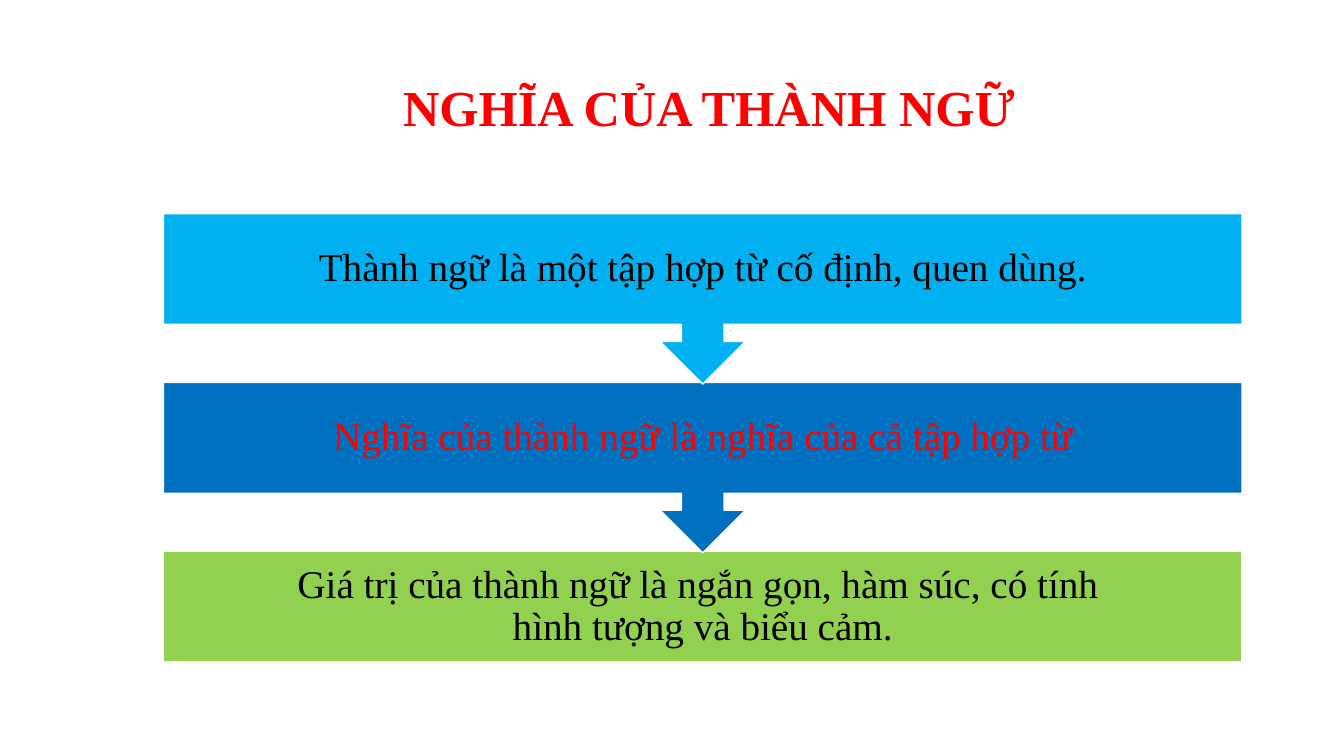
from dataclasses import dataclass

from pptx import Presentation
from pptx.dml.color import RGBColor
from pptx.enum.shapes import MSO_SHAPE as Shape
from pptx.enum.text import MSO_ANCHOR as Anchor, PP_ALIGN as Align
from pptx.shapes.autoshape import Shape as AutoShape
from pptx.slide import Slide
from pptx.util import Inches, Pt

FONT = "Times New Roman"
COLORS = {
    "white": "FFFFFF",
    "black": "000000",
    "red": "FF0000",
    "sky": "00B0F0",
    "blue": "0070C0",
    "green": "92D050",
}
STEP_LEFT, STEP_TOP, STEP_WIDTH = 1.62, 2.12, 10.7
STEP_PITCH = 1.675
BAR_HEIGHT, CALLOUT_HEIGHT = 1.1, 1.69
CALLOUT_ADJUSTMENTS = (0.25, 0.25, 0.25, 0.65)


@dataclass
class Step:
    text: str
    fill: str
    text_color: str


STEPS = [
    Step("Thành ngữ là một tập hợp từ cố định, quen dùng.", "sky", "black"),
    Step("Nghĩa của thành ngữ là nghĩa của cả tập hợp từ", "blue", "red"),
    Step(
        "Giá trị của thành ngữ là ngắn gọn, hàm súc, có tính \n"
        "hình tượng và biểu cảm.",
        "green",
        "black",
    ),
]


def color(name: str) -> RGBColor:
    return RGBColor.from_string(COLORS[name])


def write(
    box: AutoShape,
    text: str,
    size: int,
    text_color: str,
    anchor: Anchor,
    margins: tuple[float, float],
    bold: bool = False,
) -> None:
    frame = box.text_frame
    frame.text = text
    frame.word_wrap = True
    frame.vertical_anchor = anchor
    frame.margin_left = frame.margin_right = Inches(margins[0])
    frame.margin_top = frame.margin_bottom = Inches(margins[1])
    for para in frame.paragraphs:
        para.alignment = Align.CENTER
        para.line_spacing = 0.9
        for span in para.runs:
            span.font.name = FONT
            span.font.size = Pt(size)
            span.font.bold = bold
            span.font.color.rgb = color(text_color)


def draw_title(page: Slide) -> None:
    box = page.shapes.add_textbox(
        Inches(1.78), Inches(0.58), Inches(10.38), Inches(0.83)
    )
    write(box, " NGHĨA CỦA THÀNH NGỮ", 36, "red", Anchor.BOTTOM, (0.1, 0.05), True)


def draw_step(page: Slide, index: int, step: Step) -> None:
    is_last = index == len(STEPS) - 1
    box = page.shapes.add_shape(
        Shape.RECTANGLE if is_last else Shape.DOWN_ARROW_CALLOUT,
        Inches(STEP_LEFT),
        Inches(STEP_TOP + index * STEP_PITCH),
        Inches(STEP_WIDTH),
        Inches(BAR_HEIGHT if is_last else CALLOUT_HEIGHT),
    )
    if not is_last:
        for position, value in enumerate(CALLOUT_ADJUSTMENTS):
            box.adjustments[position] = value
    box.shadow.inherit = False
    box.fill.solid()
    box.fill.fore_color.rgb = color(step.fill)
    box.line.color.rgb = color("white")
    box.line.width = Pt(1)
    write(box, step.text, 28, step.text_color, Anchor.MIDDLE, (0.22, 0.22))


def main() -> None:
    deck = Presentation()
    deck.slide_width, deck.slide_height = Inches(13.33), Inches(7.5)
    page = deck.slides.add_slide(deck.slide_layouts[6])
    draw_title(page)
    for index, step in reversed(list(enumerate(STEPS))):
        draw_step(page, index, step)
    deck.save("out.pptx")


if __name__ == "__main__":
    main()
